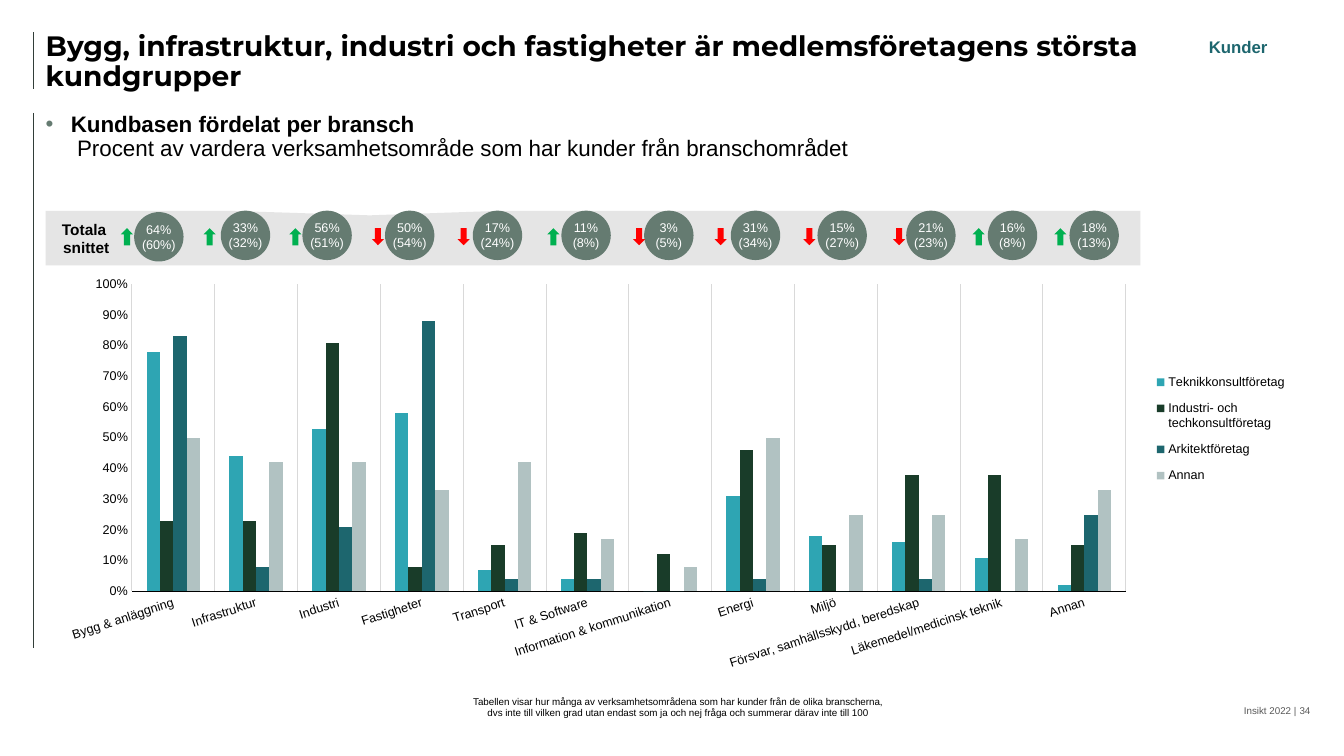
"""Build the slide on which industries the member companies' customers come from."""
from lxml.etree import SubElement
from pptx import Presentation
from pptx.chart.data import CategoryChartData
from pptx.dml.color import RGBColor
from pptx.enum.chart import XL_CHART_TYPE, XL_LEGEND_POSITION, XL_TICK_MARK
from pptx.enum.shapes import MSO_CONNECTOR, MSO_SHAPE
from pptx.enum.text import MSO_ANCHOR, PP_ALIGN
from pptx.oxml import parse_xml
from pptx.oxml.ns import nsdecls, qn
from pptx.util import Pt

COLORS = {
    "black": "000000", "rule": "323E39", "sage": "657B71", "petrol": "1D666E",
    "gray": "595959", "band": "D9D9D9", "white": "FFFFFF", "up": "00B050",
    "down": "FF0000", "teal": "2EA5B3", "forest": "193C29", "mist": "B1C2C2",
}
RGB = {name: RGBColor.from_string(value) for name, value in COLORS.items()}


def write(shape, lines, size, color="black", bold=False, align=PP_ALIGN.CENTER, font="Arial"):
    para = shape.text_frame.paragraphs[0]
    para.alignment = align
    for index, line in enumerate(lines):
        if index:
            para.add_line_break()
        span = para.add_run()
        span.text = line
        span.font.name, span.font.size, span.font.bold = font, Pt(size), bold
        span.font.color.rgb = RGB[color]
    return para


def add_box(kind, left, top, width, height, fill=None, inset=0):
    place = Pt(left), Pt(top), Pt(width), Pt(height)
    if kind is None:
        box = page.shapes.add_textbox(*place)
    else:
        box = page.shapes.add_shape(kind, *place)
        box.shadow.inherit = False
        box.fill.solid()
        box.fill.fore_color.rgb = RGB[fill]
        box.line.fill.background()
    frame = box.text_frame
    frame.word_wrap = True
    frame.margin_left = frame.margin_right = Pt(2 * inset)
    frame.margin_top = frame.margin_bottom = Pt(inset)
    return box


deck = Presentation()
deck.slide_width, deck.slide_height = Pt(960), Pt(540)
page = deck.slides.add_slide(deck.slide_layouts[6])

for top, bottom in [(23, 63.5), (80.6, 463)]:
    rule = page.shapes.add_connector(MSO_CONNECTOR.STRAIGHT, Pt(23.8), Pt(top), Pt(23.8), Pt(bottom))
    rule.line.color.rgb = RGB["rule"]
    rule.line.width = Pt(0.5)
    SubElement(rule.element.spPr, qn("a:effectLst"))

title = add_box(None, 32.6, 23, 795, 40.5)
write(title, ["Bygg, infrastruktur, industri och fastigheter är medlemsföretagens största kundgrupper"],
      20, bold=True, align=PP_ALIGN.LEFT, font="Montserrat").line_spacing = 0.9

body = add_box(None, 32.6, 80.6, 903.6, 383)
para = write(body, ["Kundbasen fördelat per bransch",
                    " Procent av vardera verksamhetsområde som har kunder från branschområdet"],
             16, bold=True, align=PP_ALIGN.LEFT)
para.runs[1].font.bold = False
para.line_spacing = 0.9
properties = para.element.get_or_add_pPr() if hasattr(para, "element") else para._p.get_or_add_pPr()
properties.set("marL", str(Pt(18)))
properties.set("indent", str(Pt(-18)))
bullet_color = SubElement(properties, qn("a:buClr"))
SubElement(bullet_color, qn("a:srgbClr"), val=COLORS["sage"])
SubElement(properties, qn("a:buFont"), typeface="Arial")
SubElement(properties, qn("a:buChar"), char="•")

note = add_box(None, 328.3, 493.2, 311.8, 24.5, inset=3.6)
write(note, ["Tabellen visar hur många av verksamhetsområdena som har kunder från de olika branscherna, "
             "dvs inte till vilken grad utan endast som ja och nej fråga och summerar därav inte till 100"], 7)
for left, width, words in [(602, 324, "Insikt 2022 |"), (720, 216, "34")]:
    footer = add_box(None, left, 499, width, 13)
    footer.text_frame.vertical_anchor = MSO_ANCHOR.BOTTOM
    write(footer, [words], 7, "gray", align=PP_ALIGN.RIGHT)
section = add_box(None, 833, 23, 103, 21.6, inset=3.6)
write(section, ["Kunder"], 12, "petrol", bold=True)

band = add_box(MSO_SHAPE.RECTANGULAR_CALLOUT, 32.6, 150.6, 782, 39, "band")
band.adjustments[0], band.adjustments[1] = -0.204, 0.417
band.element.spPr.find(qn("a:xfrm")).set("flipV", "1")
SubElement(band.element.spPr.find(".//" + qn("a:srgbClr")), qn("a:alpha"), val="66000")
label = add_box(None, 34.6, 153.4, 51, 33.8, inset=3.6)
write(label, ["Totala", " snittet"], 11, bold=True)

industries = [
    ("Bygg & anläggning", 64, 60, 95.8, 86.4),
    ("Infrastruktur", 33, 32, 157.7, 145.4),
    ("Industri", 56, 51, 216, 206.6),
    ("Fastigheter", 50, 54, 275, 265.7),
    ("Transport", 17, 24, 337.7, 326.9),
    ("IT & Software", 11, 8, 401, 391),
    ("Information & kommunikation", 3, 5, 460.1, 452.2),
    ("Energi", 31, 34, 522, 510.5),
    ("Miljö", 15, 27, 583.9, 573.8),
    ("Försvar, samhällsskydd, beredskap", 21, 23, 647.3, 637.9),
    ("Läkemedel/medicinsk teknik", 16, 8, 705.6, 694.8),
    ("Annan", 18, 13, 763.9, 753.1),
]
for index, (name, current, previous, circle_left, arrow_left) in enumerate(industries):
    circle = add_box(MSO_SHAPE.OVAL, circle_left, 150.5 if index else 151.5, 35.3, 35.3, "sage")
    circle.text_frame.word_wrap = False
    circle.text_frame.vertical_anchor = MSO_ANCHOR.MIDDLE
    write(circle, [f"{current}%", f"({previous}%)"], 9, "white")
    rising = current > previous
    arrow = add_box(MSO_SHAPE.DOWN_ARROW, arrow_left, 163, 8.6, 12.2, "up" if rising else "down")
    arrow.rotation = 180 if rising else 0

series = [
    ("Teknikkonsultföretag", "teal", [0.78, 0.44, 0.53, 0.58, 0.07, 0.04, 0, 0.31, 0.18, 0.16, 0.11, 0.02]),
    ("Industri- och\ntechkonsultföretag", "forest",
     [0.23, 0.23, 0.81, 0.08, 0.15, 0.19, 0.12, 0.46, 0.15, 0.38, 0.38, 0.15]),
    ("Arkitektföretag", "petrol", [0.83, 0.08, 0.21, 0.88, 0.04, 0.04, 0, 0.04, 0, 0.04, 0, 0.25]),
    ("Annan", "mist", [0.5, 0.42, 0.42, 0.33, 0.42, 0.17, 0.08, 0.5, 0.25, 0.25, 0.17, 0.33]),
]
data = CategoryChartData(number_format="0%")
data.categories = [industry[0] for industry in industries]
for name, color, values in series:
    data.add_series(name, values)
chart = page.shapes.add_chart(XL_CHART_TYPE.COLUMN_CLUSTERED, Pt(32.6), Pt(192.2), Pt(893), Pt(293), data).chart
chart.has_title = False
chart.font.name, chart.font.size = "Arial", Pt(9)
chart.font.color.rgb = RGB["black"]
plot = chart.plots[0]
plot.gap_width, plot.overlap, plot.vary_by_categories = 219, 0, False
for bars, (name, color, values) in zip(plot.series, series):
    bars.format.fill.solid()
    bars.format.fill.fore_color.rgb = RGB[color]

category_axis, value_axis = chart.category_axis, chart.value_axis
for axis in (category_axis, value_axis):
    axis.major_tick_mark = axis.minor_tick_mark = XL_TICK_MARK.NONE
    axis.tick_labels.font.size = Pt(9)
category_axis.has_major_gridlines = True
for line, color in [(category_axis.format.line, "black"), (category_axis.major_gridlines.format.line, "band")]:
    line.color.rgb = RGB[color]
    line.width = Pt(0.75)
category_axis._element.find(".//" + qn("a:bodyPr")).set("rot", "-1080000")
value_axis.has_major_gridlines = False
value_axis.minimum_scale, value_axis.maximum_scale, value_axis.major_unit = 0, 1, 0.1
value_axis.tick_labels.number_format = "0%"
value_axis.tick_labels.number_format_is_linked = False
value_axis.format.line.fill.background()

chart.has_legend = True
legend = chart.legend
legend.position = XL_LEGEND_POSITION.RIGHT
legend.include_in_layout = False
legend.font.size = Pt(9)
plot_area = chart.element.find(".//" + qn("c:plotArea"))
legend_part = chart.element.find(".//" + qn("c:legend"))
for part, target, spot in [(plot_area, "inner", (0.069, 0.037, 0.795, 0.749)),
                           (legend_part, None, (0.88, 0.23, 0.12, 0.32))]:
    for layout in part.findall(qn("c:layout")):
        part.remove(layout)
    layout = parse_xml(f"<c:layout {nsdecls('c')}><c:manualLayout/></c:layout>")
    manual = layout[0]
    if target:
        SubElement(manual, qn("c:layoutTarget"), val=target)
    for tag in ("xMode", "yMode"):
        SubElement(manual, qn(f"c:{tag}"), val="edge")
    for tag, share in zip("xywh", spot):
        SubElement(manual, qn(f"c:{tag}"), val=str(share))
    part.insert(0 if target else 1, layout)

deck.save("out.pptx")
